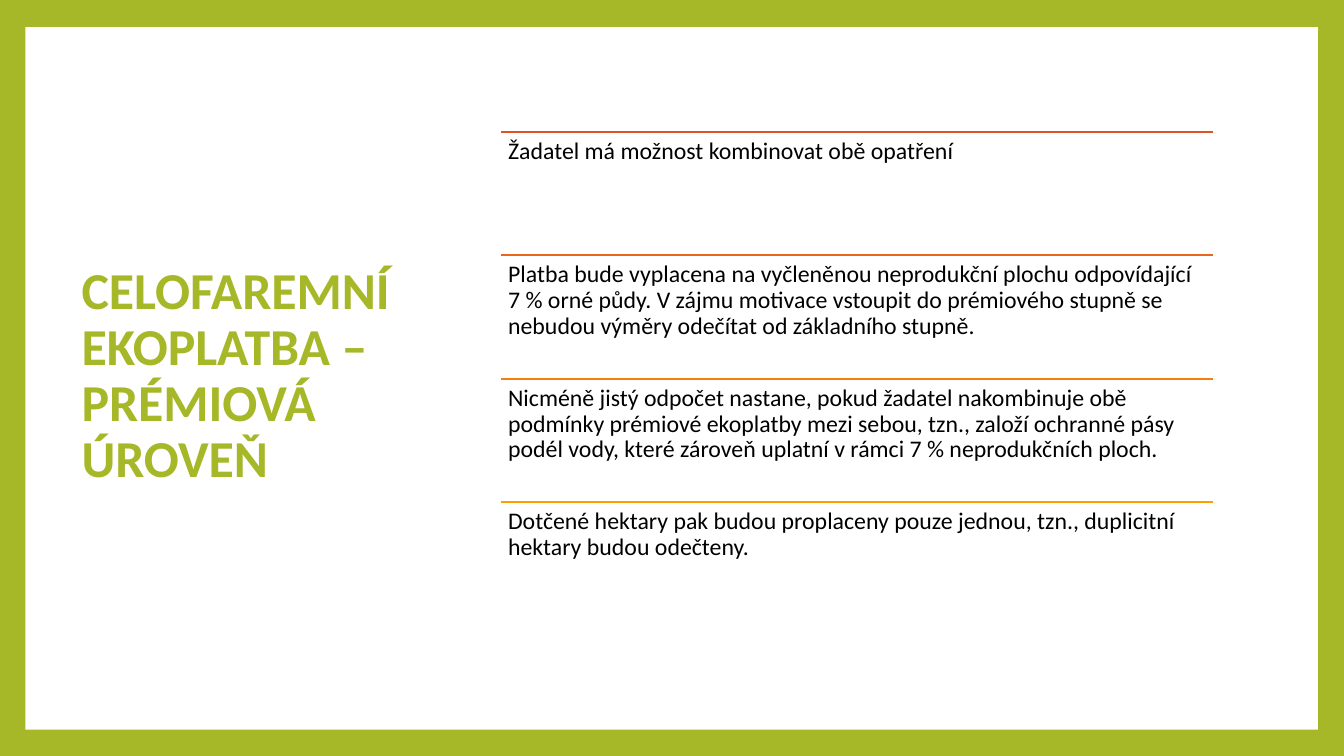
from dataclasses import dataclass

from lxml import etree
from pptx import Presentation
from pptx.dml.color import RGBColor
from pptx.enum.shapes import MSO_CONNECTOR, MSO_SHAPE
from pptx.enum.text import MSO_ANCHOR, PP_ALIGN
from pptx.oxml.ns import qn
from pptx.util import Inches, Pt

RECTANGLE = MSO_SHAPE.RECTANGLE
STRAIGHT = MSO_CONNECTOR.STRAIGHT
TOP, MIDDLE = MSO_ANCHOR.TOP, MSO_ANCHOR.MIDDLE
LEFT = PP_ALIGN.LEFT
BLANK_LAYOUT = 6


@dataclass(frozen=True)
class Theme:
    font: str = "Calibri"
    green: str = "A6B727"
    paper: str = "FFFFFF"
    ink: str = "000000"
    rules: tuple = ("DF5327", "E9661A", "F47F0D", "FE9E00")
    title_size: float = 37
    body_size: float = 17
    rule_width: float = 1.5
    line_spacing: float = 0.9


TITLE = "CELOFAREMNÍ EKOPLATBA – PRÉMIOVÁ ÚROVEŇ"
STATEMENTS = (
    "Žadatel má možnost kombinovat obě opatření",
    "Platba bude vyplacena na vyčleněnou neprodukční plochu odpovídající "
    "7 % orné půdy. V zájmu motivace vstoupit do prémiového stupně se "
    "nebudou výměry odečítat od základního stupně.",
    "Nicméně jistý odpočet nastane, pokud žadatel nakombinuje obě "
    "podmínky prémiové ekoplatby mezi sebou, tzn., založí ochranné pásy "
    "podél vody, které zároveň uplatní v rámci 7 % neprodukčních ploch.",
    "Dotčené hektary pak budou proplaceny pouze jednou, tzn., duplicitní "
    "hektary budou odečteny.",
)

# Percent of the slide's width or height
FRAME = (1.88, 3.6, 96.17, 92.93)
TITLE_AREA = (5.33, 8.93, 27.61, 81.73)
LIST_LEFT, LIST_TOP, LIST_WIDTH, ROW_HEIGHT = 37.28, 17.47, 52.96, 16.31


class SlideBuilder:
    """Draws on one slide; every length is a percent of the slide's size."""

    def __init__(self, presentation, theme):
        self.theme = theme
        self.width = presentation.slide_width
        self.height = presentation.slide_height
        layout = presentation.slide_layouts[BLANK_LAYOUT]
        self.slide = presentation.slides.add_slide(layout)

    def place(self, left, top, width, height):
        return (
            round(left * self.width / 100),
            round(top * self.height / 100),
            round(width * self.width / 100),
            round(height * self.height / 100),
        )

    def background(self, color):
        fill = self.slide.background.fill
        fill.solid()
        fill.fore_color.rgb = RGBColor.from_string(color)

    def panel(self, area, color):
        shape = self.slide.shapes.add_shape(RECTANGLE, *self.place(*area))
        shape.shadow.inherit = False
        shape.fill.solid()
        shape.fill.fore_color.rgb = RGBColor.from_string(color)
        shape.line.fill.background()

    def rule(self, left, top, width, color):
        x, y, length, _ = self.place(left, top, width, 0)
        connector = self.slide.shapes.add_connector(STRAIGHT, x, y, x + length, y)
        connector.line.color.rgb = RGBColor.from_string(color)
        connector.line.width = Pt(self.theme.rule_width)
        properties = connector._element.spPr
        etree.SubElement(properties, qn("a:effectLst"))

    def text(self, area, text, size, color, anchor=TOP, inset=0.07, bold=False):
        frame = self.slide.shapes.add_textbox(*self.place(*area)).text_frame
        frame.word_wrap = True
        frame.vertical_anchor = anchor
        frame.margin_left = frame.margin_right = Inches(inset)
        frame.margin_top = frame.margin_bottom = Inches(inset)
        frame.text = text
        paragraph = frame.paragraphs[0]
        paragraph.alignment = LEFT
        paragraph.line_spacing = self.theme.line_spacing
        font = paragraph.runs[0].font
        font.name = self.theme.font
        font.size = Pt(size)
        font.bold = bold
        font.color.rgb = RGBColor.from_string(color)


def main():
    presentation = Presentation()
    presentation.slide_width = Inches(13.33)
    presentation.slide_height = Inches(7.5)
    theme = Theme()
    builder = SlideBuilder(presentation, theme)

    builder.background(theme.green)
    builder.panel(FRAME, theme.paper)
    builder.text(TITLE_AREA, TITLE, theme.title_size, theme.green,
                 anchor=MIDDLE, inset=0.1, bold=True)

    for row, (statement, color) in enumerate(zip(STATEMENTS, theme.rules)):
        top = LIST_TOP + row * ROW_HEIGHT
        builder.rule(LIST_LEFT, top, LIST_WIDTH, color)
        builder.text((LIST_LEFT, top, LIST_WIDTH, ROW_HEIGHT), statement,
                     theme.body_size, theme.ink)

    presentation.save("out.pptx")


if __name__ == "__main__":
    main()
